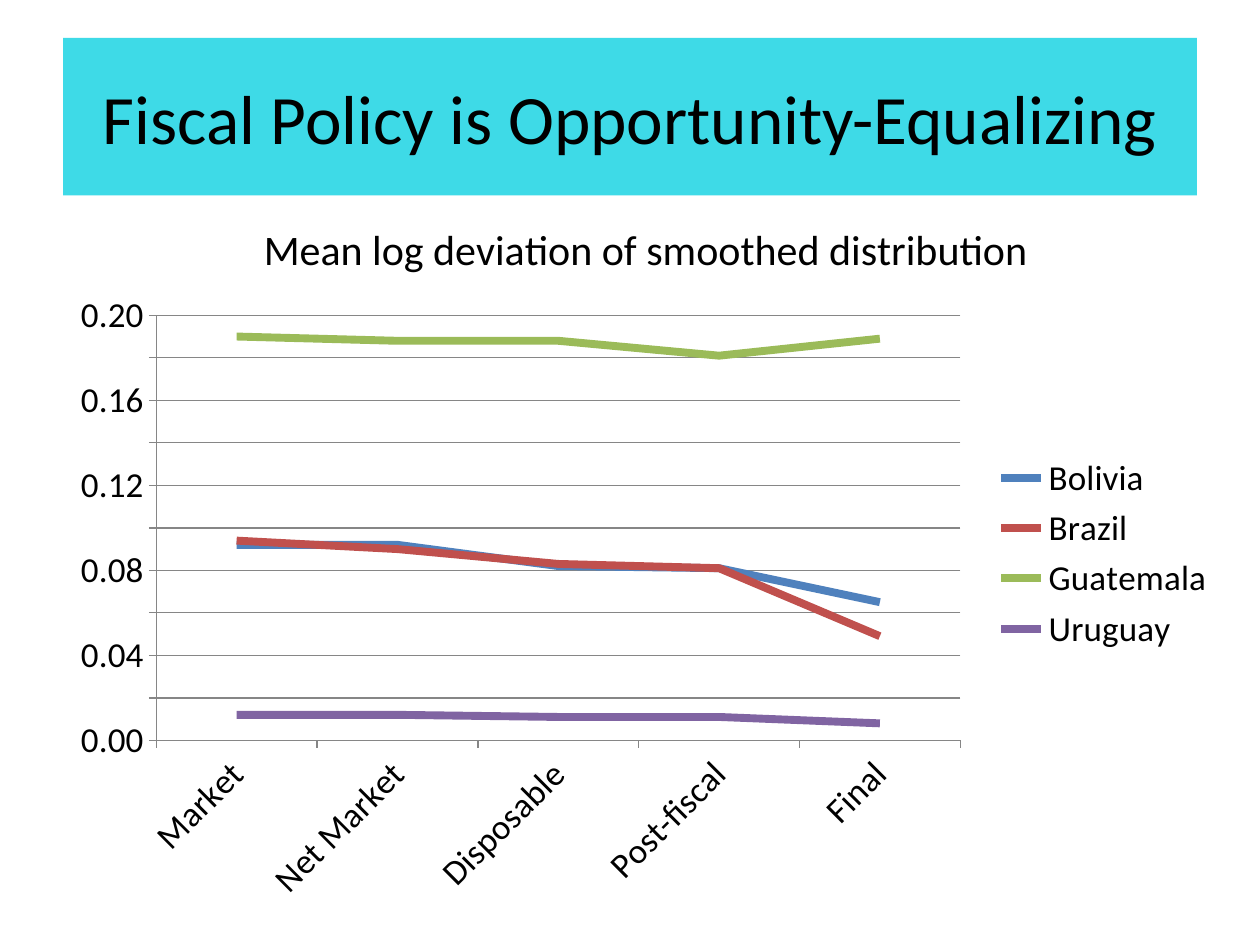
"""Build a slide with a line chart of fiscal policy and opportunity."""
from dataclasses import dataclass

import pptx
import pptx.chart.chart
import pptx.chart.data
import pptx.dml.color
import pptx.dml.line
import pptx.enum.chart
import pptx.enum.text
import pptx.oxml
import pptx.oxml.ns
import pptx.slide
import pptx.text.text
import pptx.util

Pt = pptx.util.Pt
FONT = "Calibri"
BLACK = "000000"
GRID = "868686"
CATEGORIES = ("Market", "Net Market", "Disposable", "Post-fiscal", "Final")


@dataclass(frozen=True)
class Country:
    """One line of the chart."""
    name: str
    color: str
    values: tuple[float, ...]


COUNTRIES = (
    Country("Bolivia", "4F81BD", (0.092, 0.092, 0.082, 0.081, 0.065)),
    Country("Brazil", "C0504D", (0.094, 0.09, 0.083, 0.081, 0.049)),
    Country("Guatemala", "9BBB59", (0.19, 0.188, 0.188, 0.181, 0.189)),
    Country("Uruguay", "8064A2", (0.012, 0.012, 0.011, 0.011, 0.008)),
)


def rgb(value: str) -> pptx.dml.color.RGBColor:
    """Turn a hex string into a colour."""
    return pptx.dml.color.RGBColor.from_string(value)


def apply(target: object, values: dict) -> None:
    """Set attributes from a dict of format values."""
    for name, value in values.items():
        setattr(target, name, value)


def set_font(font: pptx.text.text.Font, size: float) -> None:
    """Give a font the slide's face, colour and weight."""
    apply(font, {"name": FONT, "size": Pt(size), "bold": False})
    font.color.rgb = rgb(BLACK)


def set_line(line: pptx.dml.line.LineFormat, color: str, width: float) -> None:
    """Set the colour and width of a line."""
    line.color.rgb = rgb(color)
    line.width = Pt(width)


def add_title(s: pptx.slide.Slide, text: str) -> None:
    """Fill and place the title placeholder."""
    sp = s.shapes.title
    apply(sp, {"left": Pt(36), "top": Pt(21.6), "width": Pt(648), "height": Pt(90)})
    sp.fill.solid()
    sp.fill.fore_color.rgb = rgb("3EDAE7")
    tf = sp.text_frame
    apply(tf, {"word_wrap": True, "auto_size": pptx.enum.text.MSO_AUTO_SIZE.NONE,
               "vertical_anchor": pptx.enum.text.MSO_ANCHOR.MIDDLE})
    p = tf.paragraphs[0]
    p.alignment = pptx.enum.text.PP_ALIGN.CENTER
    r = p.add_run()
    r.text = text
    set_font(r.font, 39.6)


def set_plot_layout(chart: pptx.chart.chart.Chart, **box: float) -> None:
    """Fix the inner plot area as fractions of the chart."""
    area = chart.plots[0]._element.getparent()
    for old in area.findall(pptx.oxml.ns.qn("c:layout")):
        area.remove(old)
    sizes = "".join(f'<c:{key} val="{value}"/>' for key, value in box.items())
    area.insert(0, pptx.oxml.parse_xml(
        f'<c:layout {pptx.oxml.ns.nsdecls("c")}><c:manualLayout>'
        '<c:layoutTarget val="inner"/><c:xMode val="edge"/><c:yMode val="edge"/>'
        f'{sizes}</c:manualLayout></c:layout>'))


def add_line_chart(s: pptx.slide.Slide, title: str) -> None:
    """Add the chart with its title, axes, legend and lines."""
    data = pptx.chart.data.CategoryChartData(number_format="0.000")
    data.categories = CATEGORIES
    for country in COUNTRIES:
        data.add_series(country.name, country.values)
    chart = s.shapes.add_chart(pptx.enum.chart.XL_CHART_TYPE.LINE,
                               Pt(36), Pt(110.2), Pt(666), Pt(411.8), data).chart
    set_font(chart.font, 20)
    apply(chart, {"has_title": True, "has_legend": True})
    tf = chart.chart_title.text_frame
    tf.text = title
    set_font(tf.paragraphs[0].runs[0].font, 24)
    chart.chart_title.include_in_layout = False
    apply(chart.legend, {"position": pptx.enum.chart.XL_LEGEND_POSITION.RIGHT,
                         "include_in_layout": False})
    set_font(chart.legend.font, 20)
    for axis in (chart.category_axis, chart.value_axis):
        axis.major_tick_mark = pptx.enum.chart.XL_TICK_MARK.OUTSIDE
        set_line(axis.format.line, GRID, 0.75)
        set_font(axis.tick_labels.font, 20)
    label_body = chart.category_axis._element.find(
        f'{pptx.oxml.ns.qn("c:txPr")}/{pptx.oxml.ns.qn("a:bodyPr")}')
    label_body.set("rot", "-2700000")
    apply(chart.value_axis, {"minimum_scale": 0, "maximum_scale": 0.2,
                             "major_unit": 0.02, "has_major_gridlines": True})
    set_line(chart.value_axis.major_gridlines.format.line, GRID, 0.75)
    apply(chart.value_axis.tick_labels,
          {"number_format": "#,##0.00", "number_format_is_linked": False})
    for series, country in zip(chart.plots[0].series, COUNTRIES):
        series.smooth = False
        series.marker.style = pptx.enum.chart.XL_MARKER_STYLE.NONE
        set_line(series.format.line, country.color, 4.5)
    set_plot_layout(chart, x=0.08, y=0.17, w=0.69, h=0.59)


def main() -> None:
    """Build and save the slide."""
    prs = pptx.Presentation()
    apply(prs, {"slide_width": Pt(720), "slide_height": Pt(540)})
    s = prs.slides.add_slide(prs.slide_layouts[5])
    add_title(s, "Fiscal Policy is Opportunity-Equalizing")
    add_line_chart(s, "Mean log deviation of smoothed distribution")
    prs.save("out.pptx")


if __name__ == "__main__":
    main()
